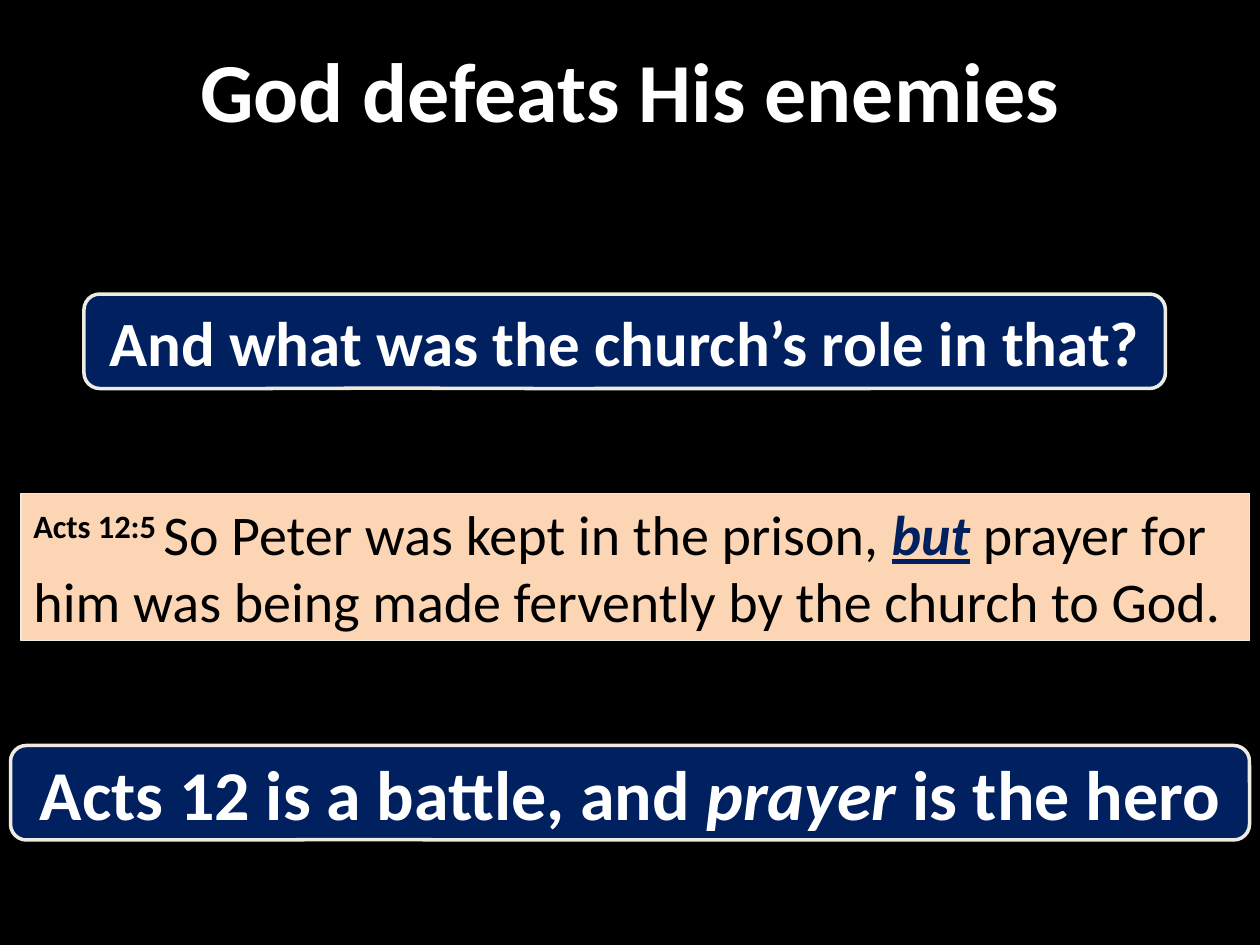
"""Build the slide on the church's prayer in Acts 12."""
from pptx import Presentation
from pptx.dml.color import RGBColor
from pptx.enum.shapes import MSO_SHAPE
from pptx.enum.text import MSO_ANCHOR, PP_ALIGN
from pptx.util import Pt

COLORS = {
    "black": "000000",
    "white": "FFFFFF",
    "navy": "002060",
    "cream": "EEECE1",
    "peach": "FCD5B5",
}
CALLOUT_ADJUSTMENTS = (-0.219, 0.496, 0.167)


def add_panel(slide, preset, box, fill, line_width, anchor, align):
    panel = slide.shapes.add_shape(preset, *[Pt(length) for length in box])
    panel.shadow.inherit = False
    panel.fill.solid()
    panel.fill.fore_color.rgb = RGBColor.from_string(COLORS[fill])
    if line_width:
        panel.line.color.rgb = RGBColor.from_string(COLORS["cream"])
        panel.line.width = Pt(line_width)
    else:
        panel.line.fill.background()
    panel.text_frame.word_wrap = True
    panel.text_frame.vertical_anchor = anchor
    paragraph = panel.text_frame.paragraphs[0]
    paragraph.alignment = align
    return panel, paragraph


def add_run(paragraph, text, size, color, bold=False, italic=False):
    run = paragraph.add_run()
    run.text = text
    run.font.name = "Calibri"
    run.font.size = Pt(size)
    run.font.bold = bold
    run.font.italic = italic
    run.font.color.rgb = RGBColor.from_string(COLORS[color])
    return run


presentation = Presentation()
presentation.slide_width = Pt(720)
presentation.slide_height = Pt(540)
slide = presentation.slides.add_slide(presentation.slide_layouts[6])
slide.background.fill.solid()
slide.background.fill.fore_color.rgb = RGBColor.from_string(COLORS["black"])

callouts = [
    ((48, 168, 618, 54), "navy", 2, 36,
     [("And what was the church’s role in that?", False)]),
    ((-6, 12, 732, 78), "black", 0, 48,
     [("God defeats His enemies", False)]),
    ((6, 426, 708, 54), "navy", 2, 40,
     [("Acts 12 is a battle, and ", False), ("prayer", True), (" is the hero", False)]),
]
for box, fill, line_width, size, phrases in callouts:
    callout, sentence = add_panel(
        slide, MSO_SHAPE.ROUNDED_RECTANGULAR_CALLOUT, box, fill, line_width,
        MSO_ANCHOR.MIDDLE, PP_ALIGN.CENTER)
    for index, adjustment in enumerate(CALLOUT_ADJUSTMENTS):
        callout.adjustments[index] = adjustment
    for text, italic in phrases:
        add_run(sentence, text, size, "white", bold=True, italic=italic)

verse_panel, verse = add_panel(
    slide, MSO_SHAPE.RECTANGLE, (12, 282, 702, 84), "peach", 0.75,
    MSO_ANCHOR.TOP, PP_ALIGN.LEFT)
reference = add_run(verse, "Acts 12:5 ", 32, "black", bold=True)
reference.font._element.set("baseline", "30000")
add_run(verse, "So Peter was kept in the prison, ", 32, "black")
contrast = add_run(verse, "but", 32, "navy", bold=True, italic=True)
contrast.font.underline = True
add_run(verse, " prayer for him was being made fervently by the church to God.", 32, "black")

presentation.save("out.pptx")
